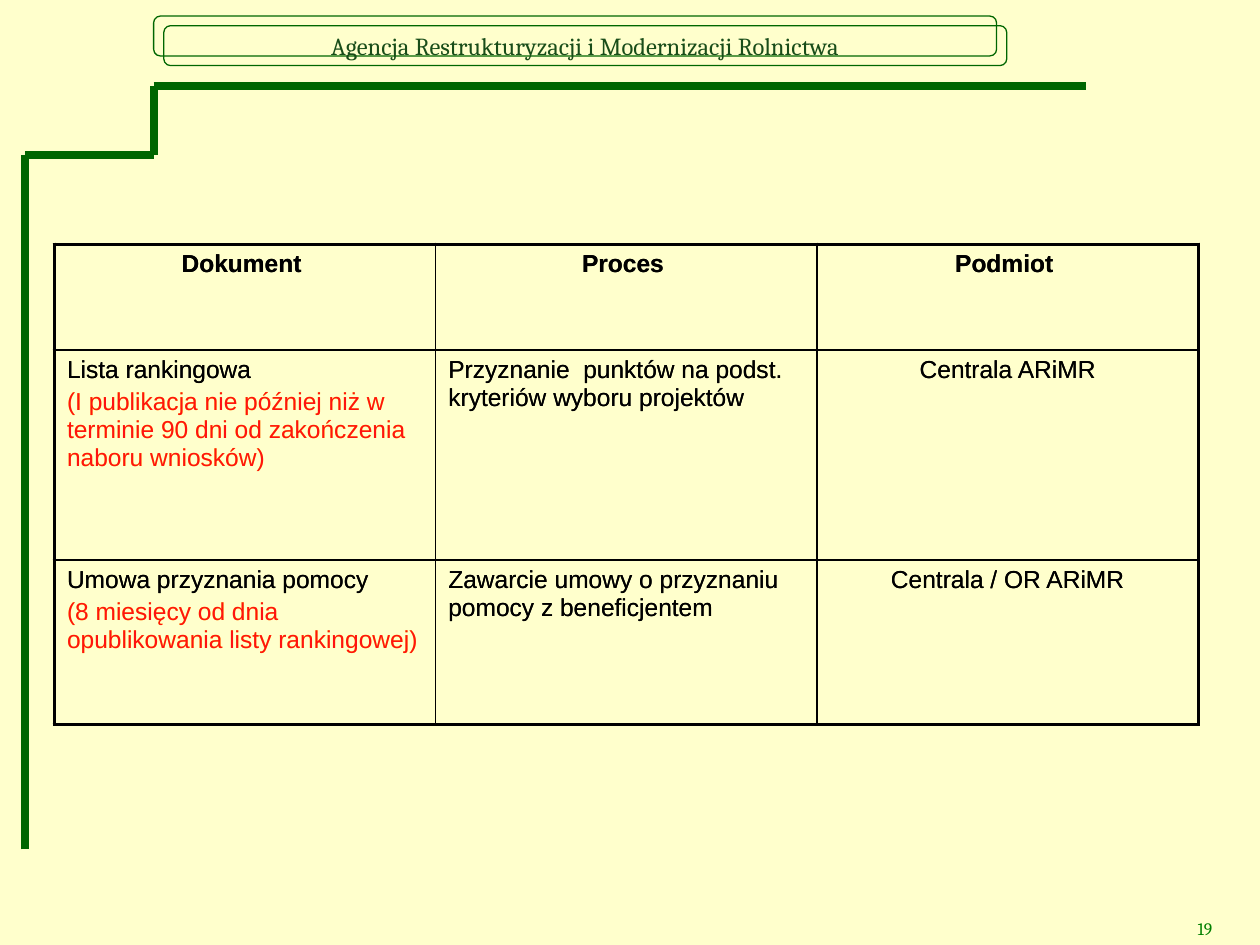
"""Build the slide listing documents, processes and responsible bodies."""

from typing import NamedTuple

from lxml.etree import SubElement
from pptx import Presentation
from pptx.dml.color import RGBColor
from pptx.enum.shapes import MSO_CONNECTOR, MSO_SHAPE
from pptx.enum.text import MSO_ANCHOR, PP_ALIGN
from pptx.oxml import parse_xml
from pptx.oxml.ns import nsdecls, qn
from pptx.util import Pt

COLOURS = {
    "background": "FFFFCC",
    "frame": "006600",
    "agency": "194D19",
    "number": "008000",
    "text": "000000",
    "deadline glow": "FFFF1A",
    "deadline": "FF1212",
}
AGENCY_FONT = {"name": "Cambria", "size": Pt(14)}
NUMBER_FONT = {"name": "Cambria", "size": Pt(10)}
HEADING_FONT = {"name": "Arial", "size": Pt(14), "bold": True}
BODY_FONT = HEADING_FONT | {"bold": False}

OUTER_BORDER, INNER_BORDER = 2.25, 1
COLUMN_WIDTH = 217.9
ROW_HEIGHTS = (60.4, 120, 94)
TABLE_LEFT, TABLE_TOP = 31.1, 139.6


class Box(NamedTuple):
    left: float
    top: float
    width: float
    height: float


class Step(NamedTuple):
    document: str
    deadline: str
    process: str
    body: str


HEADINGS = ("Dokument ", "Proces ", "Podmiot ")
STEPS = (
    Step(
        "Lista rankingowa",
        "(I publikacja nie później niż w terminie 90 dni od zakończenia naboru wniosków)",
        "Przyznanie  punktów na podst. kryteriów wyboru projektów",
        "Centrala ARiMR",
    ),
    Step(
        "Umowa przyznania pomocy",
        "(8 miesięcy od dnia opublikowania listy rankingowej)",
        "Zawarcie umowy o przyznaniu pomocy z beneficjentem",
        "Centrala / OR ARiMR",
    ),
)
FRAME_PATH = ((14.4, 485.3), (14.4, 88.6), (87.8, 88.6), (87.8, 49), (620.6, 49))
BANNERS = (Box(87.8, 9.2, 481.7, 22.8), Box(93.6, 14.7, 481.7, 22.8))
NUMBER_BOX = Box(490.3, 521.3, 209.5, 20.9)


def colour(name: str) -> RGBColor:
    """Return a named colour."""
    return RGBColor.from_string(COLOURS[name])


def write(paragraph, text: str, font: dict, tint: str, align=PP_ALIGN.LEFT) -> None:
    """Put one formatted run in a paragraph."""
    paragraph.alignment = align
    run = paragraph.add_run()
    run.text = text
    for attribute, value in font.items():
        setattr(run.font, attribute, value)
    run.font.color.rgb = colour(tint)


def draw_frame(slide) -> None:
    """Join the frame's corner points with thick lines."""
    for start, end in zip(FRAME_PATH, FRAME_PATH[1:]):
        line = slide.shapes.add_connector(
            MSO_CONNECTOR.STRAIGHT, *(Pt(value) for value in start + end)
        )
        line.line.color.rgb = colour("frame")
        line.line.width = Pt(4.5)
        SubElement(line._element.spPr, qn("a:effectLst"))


def draw_banner(slide, box: Box):
    """Draw one rounded outline and return its text frame."""
    banner = slide.shapes.add_shape(
        MSO_SHAPE.ROUNDED_RECTANGLE, *(Pt(value) for value in box)
    )
    banner.shadow.inherit = False
    banner.fill.background()
    banner.line.color.rgb = colour("frame")
    banner.line.width = Pt(0.75)
    return banner.text_frame


def draw_number(slide, number: str) -> None:
    """Write the slide number at the lower right."""
    frame = slide.shapes.add_textbox(*(Pt(value) for value in NUMBER_BOX)).text_frame
    frame.word_wrap = True
    write(frame.paragraphs[0], number, NUMBER_FONT, "number", PP_ALIGN.RIGHT)


def set_borders(cell, widths: dict[str, float]) -> None:
    """Give a cell solid borders of the given widths."""
    for position, (side, width) in enumerate(widths.items()):
        border = parse_xml(
            f'<a:{side} {nsdecls("a")} w="{Pt(width)}"><a:solidFill>'
            f'<a:srgbClr val="{COLOURS["text"]}"/></a:solidFill></a:{side}>'
        )
        cell._tc.get_or_add_tcPr().insert(position, border)


def draw_table(slide, deadline_tint: str) -> None:
    """Draw the table of steps with a heavier outer border."""
    rows, columns = len(ROW_HEIGHTS), len(HEADINGS)
    box = Box(TABLE_LEFT, TABLE_TOP, COLUMN_WIDTH * columns, sum(ROW_HEIGHTS))
    table = slide.shapes.add_table(rows, columns, *(Pt(value) for value in box)).table
    table.first_row = table.horz_banding = False
    for column in table.columns:
        column.width = Pt(COLUMN_WIDTH)
    for row, height in zip(table.rows, ROW_HEIGHTS):
        row.height = Pt(height)

    for r in range(rows):
        for c in range(columns):
            cell = table.cell(r, c)
            cell.fill.background()
            on_edge = {
                "lnL": c == 0,
                "lnR": c == columns - 1,
                "lnT": r == 0,
                "lnB": r == rows - 1,
            }
            set_borders(
                cell,
                {s: OUTER_BORDER if edge else INNER_BORDER for s, edge in on_edge.items()},
            )

    for c, heading in enumerate(HEADINGS):
        first = table.cell(0, c).text_frame.paragraphs[0]
        write(first, heading, HEADING_FONT, "text", PP_ALIGN.CENTER)
    for r, step in enumerate(STEPS, start=1):
        document, process, body = (table.cell(r, c).text_frame for c in range(columns))
        write(document.paragraphs[0], step.document, BODY_FONT, "text")
        deadline = document.add_paragraph()
        deadline.space_before = Pt(2.8)
        write(deadline, step.deadline, BODY_FONT, deadline_tint)
        write(process.paragraphs[0], step.process, BODY_FONT, "text")
        write(body.paragraphs[0], step.body, BODY_FONT, "text", PP_ALIGN.CENTER)


def main() -> None:
    """Build and save the slide."""
    deck = Presentation()
    deck.slide_width, deck.slide_height = Pt(720), Pt(540)
    slide = deck.slides.add_slide(deck.slide_layouts[6])
    slide.background.fill.solid()
    slide.background.fill.fore_color.rgb = colour("background")

    draw_frame(slide)
    _, agency = [draw_banner(slide, box) for box in BANNERS]
    agency.word_wrap = False
    agency.vertical_anchor = MSO_ANCHOR.MIDDLE
    write(
        agency.paragraphs[0],
        "Agencja Restrukturyzacji i Modernizacji Rolnictwa",
        AGENCY_FONT,
        "agency",
        PP_ALIGN.CENTER,
    )
    draw_number(slide, "19")
    for deadline_tint in ("deadline glow", "deadline"):
        draw_table(slide, deadline_tint)
    deck.save("out.pptx")


if __name__ == "__main__":
    main()
